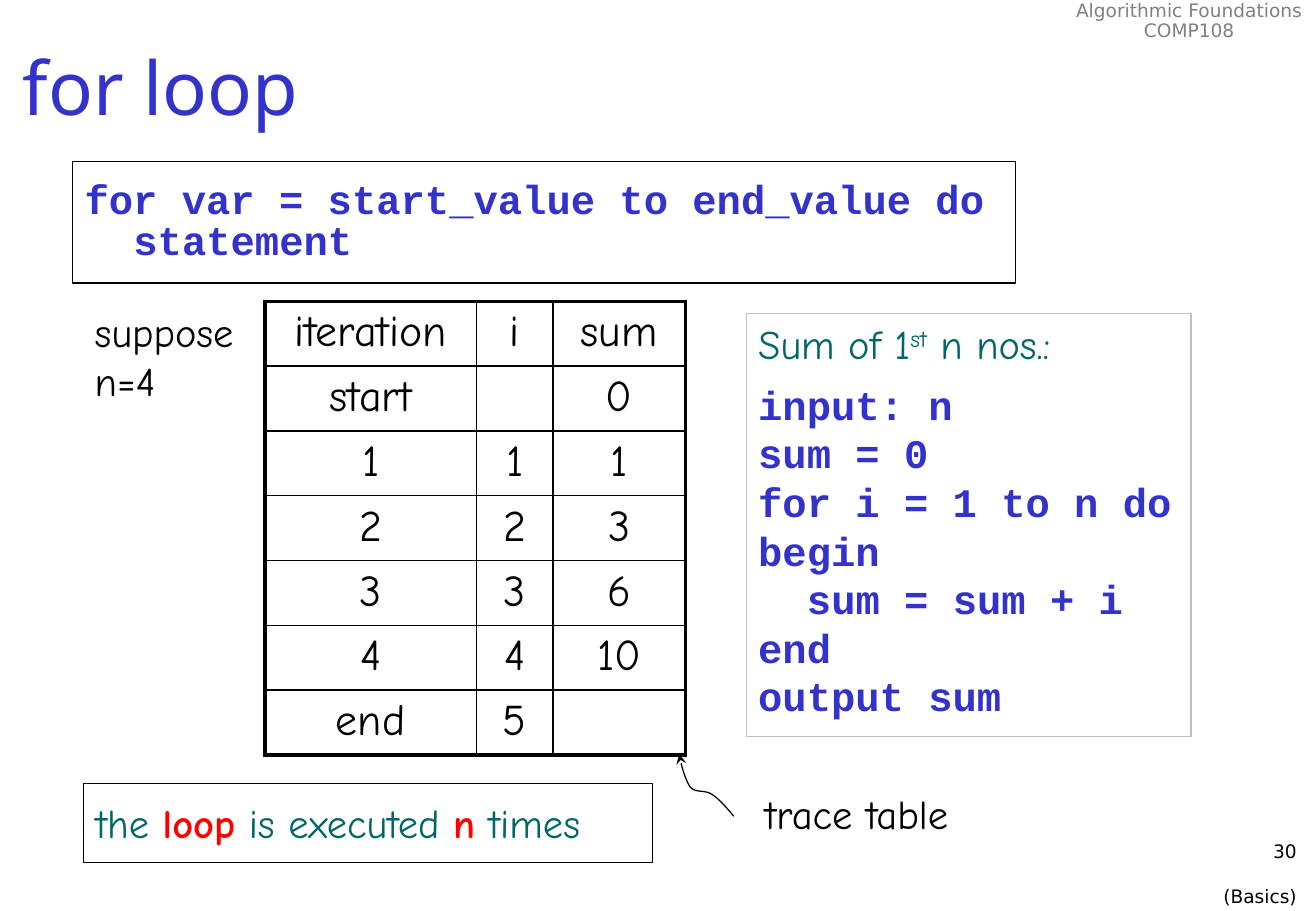
from lxml import etree
from pptx import Presentation
from pptx import util as u
from pptx.dml.color import RGBColor
from pptx.enum import shapes, text
from pptx.oxml import ns

COLOURS = {"black": "000000", "white": "FFFFFF", "grey": "808080", "silver": "C0C0C0",
           "blue": "3333CC", "teal": "006666", "red": "FF0000"}
BODY, CODE, SMALL, TITLE = "Comic Neue", "Courier New", "DejaVu Sans", "Noto Sans"
LEFT, CENTER, RIGHT = text.PP_ALIGN.LEFT, text.PP_ALIGN.CENTER, text.PP_ALIGN.RIGHT


def colour(name):
    return RGBColor.from_string(COLOURS[name])


def add_text(frame, content, new=True, align=LEFT, spacing=None, before=0, after=0, indent=0,
             **style):
    """Write one paragraph; content is a string or a list of (string, run format) pairs."""
    paragraph = frame.add_paragraph() if new else frame.paragraphs[0]
    paragraph.alignment = align
    paragraph.line_spacing = spacing
    paragraph.space_before, paragraph.space_after = u.Pt(before), u.Pt(after)
    if indent:
        paragraph._p.get_or_add_pPr().set("marL", str(u.Cm(indent)))
    for words, changes in [(content, {})] if isinstance(content, str) else content:
        look = {"font": BODY, "size": 24, "color": "black", "bold": False, **style, **changes}
        run = paragraph.add_run()
        run.text = words
        run.font.name, run.font.size = look["font"], u.Pt(look["size"])
        run.font.bold = look["bold"]
        run.font.color.rgb = colour(look["color"])
        if "baseline" in look:
            run.font._element.set("baseline", str(look["baseline"]))


class SlideBuilder:
    def __init__(self, slide):
        self.slide = slide
        self.line_width = u.Pt(0.75)

    def label(self, place, wrap=True, anchor=text.MSO_ANCHOR.TOP):
        frame = self.slide.shapes.add_textbox(*map(u.Cm, place)).text_frame
        frame.word_wrap, frame.vertical_anchor = wrap, anchor
        return frame

    def box(self, place, line="black", fill=None, anchor=text.MSO_ANCHOR.MIDDLE):
        shape = self.slide.shapes.add_shape(shapes.MSO_SHAPE.RECTANGLE, *map(u.Cm, place))
        self.outline(shape, line)
        if fill:
            shape.fill.solid()
            shape.fill.fore_color.rgb = colour(fill)
        shape.text_frame.word_wrap, shape.text_frame.vertical_anchor = True, anchor
        return shape.text_frame

    def outline(self, shape, line):
        shape.shadow.inherit = False
        shape.fill.background()
        shape.line.color.rgb = colour(line)
        shape.line.width = self.line_width

    def table(self, left, top, widths, row_height, rows):
        size = len(rows), len(widths)
        table = self.slide.shapes.add_table(
            *size, u.Cm(left), u.Cm(top), u.Cm(sum(widths)), u.Cm(row_height * size[0])).table
        table.first_row = table.horz_banding = False
        for column, width in zip(table.columns, widths):
            column.width = u.Cm(width)
        for r, row in enumerate(rows):
            table.rows[r].height = u.Cm(row_height)
            for c, words in enumerate(row):
                cell = table.cell(r, c)
                cell.fill.background()
                if words:
                    add_text(cell.text_frame, words, new=False, align=CENTER, size=26)
                self.borders(cell, L=c == 0, R=c == size[1] - 1, T=r == 0, B=r == size[0] - 1)

    def borders(self, cell, **outer_sides):
        properties = cell._tc.get_or_add_tcPr()
        for position, (side, outer) in enumerate(outer_sides.items()):
            line = etree.Element(ns.qn("a:ln" + side), w=str(u.Pt(2.25 if outer else 1)))
            fill = etree.SubElement(line, ns.qn("a:solidFill"))
            etree.SubElement(fill, ns.qn("a:srgbClr"), val=COLOURS["black"])
            properties.insert(position, line)

    def curved_arrow(self, points, steps=10):
        """Follow joined cubic curves; the arrowhead sits at the first point."""
        track = []
        for first in range(0, len(points) - 1, 3):
            for step in range(1, steps + 1):
                t = step / steps
                weights = (1 - t) ** 3, 3 * t * (1 - t) ** 2, 3 * t * t * (1 - t), t ** 3
                curve = points[first:first + 4]
                track.append([u.Cm(sum(w * p[axis] for w, p in zip(weights, curve)))
                              for axis in (0, 1)])
        builder = self.slide.shapes.build_freeform(*map(u.Cm, points[0]))
        builder.add_line_segments(track, close=False)
        shape = builder.convert_to_shape()
        self.outline(shape, "black")
        etree.SubElement(shape.line._get_or_add_ln(), ns.qn("a:headEnd"), type="stealth")


def main():
    presentation = Presentation()
    presentation.slide_width, presentation.slide_height = u.Cm(27.51), u.Cm(19.05)
    page = SlideBuilder(presentation.slides.add_slide(presentation.slide_layouts[6]))

    # Course header, page number and title
    header = page.label((22.22, -0.1, 5.28, 1.09), wrap=False)
    small = {"font": SMALL, "size": 11}
    for number, words in enumerate(["Algorithmic Foundations", "COMP108"]):
        add_text(header, words, new=number > 0, align=CENTER, spacing=0.9, color="grey", **small)
    footer = page.label((21.62, 17.45, 5.74, 1.27))
    add_text(footer, "30", new=False, align=RIGHT, **small)
    add_text(footer, "(Basics)", align=RIGHT, before=13, **small)
    title = page.label((0.23, 0.2, 27.28, 3.18), anchor=text.MSO_ANCHOR.MIDDLE)
    add_text(title, "for loop", new=False, font=TITLE, size=44, color="blue")

    # Trace table
    page.table(5.54, 6.3, [4.42, 1.6, 2.77], 1.35, [
        ("iteration", "i", "sum"), ("start", "", "0"), ("1", "1", "1"), ("2", "2", "3"),
        ("3", "3", "6"), ("4", "4", "10"), ("end", "5", "")])
    add_text(page.label((1.73, 6.3, 3.61, 2.31)), "suppose n=4", new=False)

    # Example program; nested lines are indented by two characters
    code = {"font": CODE, "color": "blue", "bold": True}
    nested = 1.02
    program = page.box((15.6, 6.55, 9.3, 8.86), line="silver", fill="white",
                       anchor=text.MSO_ANCHOR.TOP)
    add_text(program, [("Sum of 1", {}), ("st", {"baseline": 30000}), (" n nos.:", {})],
             new=False, after=7.2, color="teal")
    for words, indent in [("input: n", 0), ("sum = 0", 0), ("for i = 1 to n do", 0), ("begin", 0),
                          ("sum = sum + i", nested), ("end", 0), ("output sum", 0)]:
        add_text(program, words, indent=indent, **code)

    # Loop syntax
    syntax = page.box((1.52, 3.38, 19.71, 2.54))
    add_text(syntax, "for var = start_value to end_value do", new=False, spacing=0.85, **code)
    add_text(syntax, "statement", spacing=0.85, indent=nested, **code)

    # Conclusion
    strong = {"color": "red", "bold": True}
    add_text(page.box((1.75, 16.38, 11.89, 1.65)),
             [("the ", {}), ("loop", strong), (" is executed ", {}), ("n", strong),
              (" times", {})], new=False, color="teal")

    # Table caption and its arrow
    add_text(page.label((14.71, 16.38, 5.36, 1.47)), "trace table", new=False, align=RIGHT)
    page.curved_arrow([(14.2, 15.77), (14.25, 16.05), (14.33, 16.31), (14.43, 16.46),
                       (14.55, 16.59), (14.73, 16.51), (14.88, 16.61),
                       (15.04, 16.71), (15.19, 16.89), (15.34, 17.07)])

    presentation.save("out.pptx")


if __name__ == "__main__":
    main()
